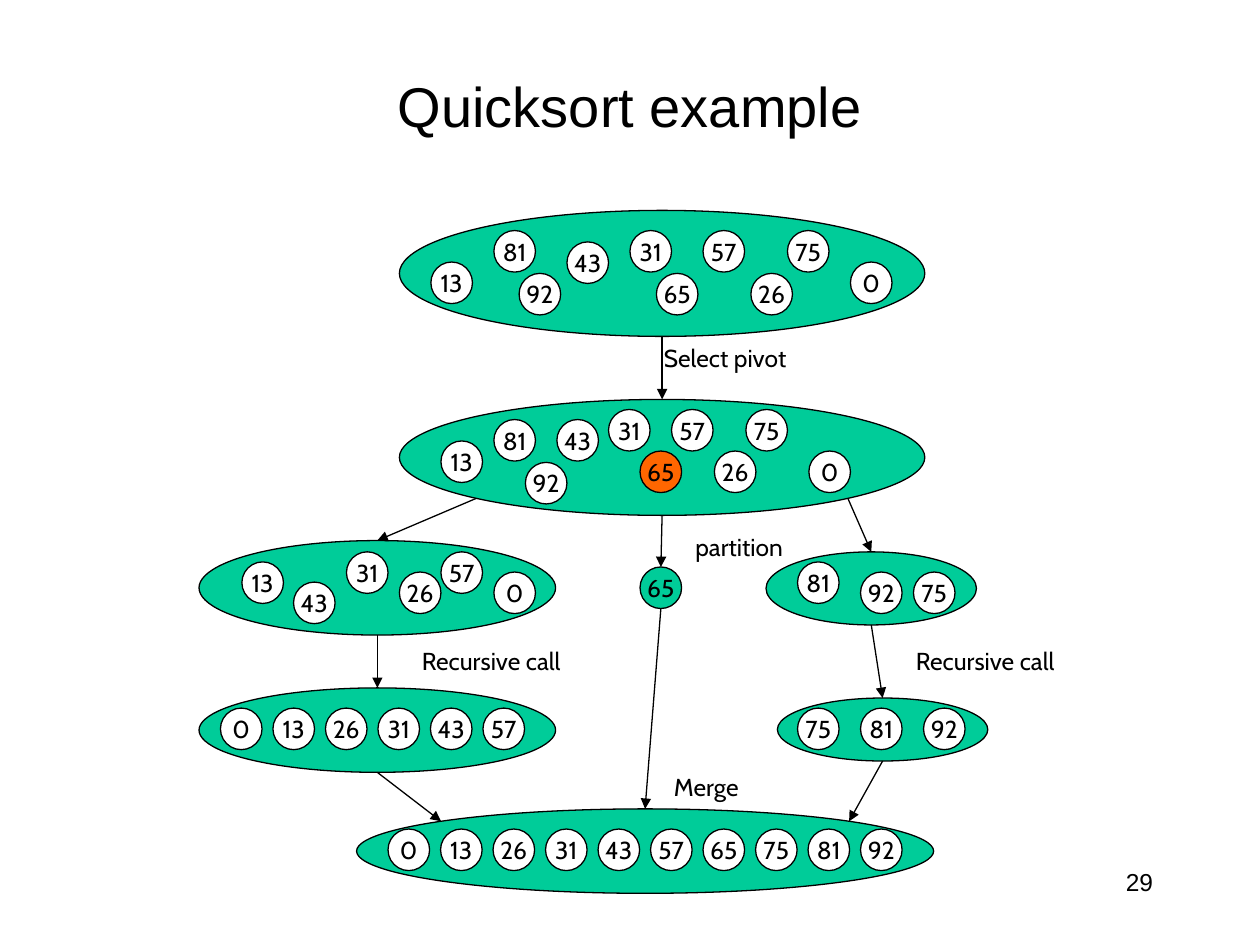
"""Build the quicksort example slide."""
import math
from typing import NamedTuple

import lxml.etree
import pptx
import pptx.dml.color
import pptx.enum.shapes
import pptx.enum.text
import pptx.oxml.ns
import pptx.util

Inches = pptx.util.Inches
Pt = pptx.util.Pt
RGBColor = pptx.dml.color.RGBColor
Align = pptx.enum.text.PP_ALIGN
Anchor = pptx.enum.text.MSO_ANCHOR

BLACK = RGBColor(0x00, 0x00, 0x00)
WHITE = RGBColor(0xFF, 0xFF, 0xFF)
GREEN = RGBColor(0x00, 0xCC, 0x99)
ORANGE = RGBColor(0xFF, 0x66, 0x00)

BALL = 0.33
STEP = 5 / 12


class Ball(NamedTuple):
    value: int
    left: float
    top: float
    fill: RGBColor = WHITE


class Oval(NamedTuple):
    left: float
    top: float
    width: float
    height: float
    balls: list[Ball]

    def rim(self, angle: int) -> tuple[float, float]:
        """Return the rim point at an angle, clockwise from the right."""
        turn = math.radians(angle)
        return (self.left + self.width / 2 * (1 + math.cos(turn)),
                self.top + self.height / 2 * (1 + math.sin(turn)))


class Arrow(NamedTuple):
    start: Oval
    leave: int
    end: Oval
    enter: int


class Label(NamedTuple):
    text: str
    left: float
    top: float
    width: float
    height: float = 0.33
    size: int = 14
    font: str = "Cabin"
    align: Align = Align.LEFT
    anchor: Anchor = Anchor.TOP
    wrap: bool = False


def row(values: list[int], left: float, top: float, step: float = STEP) -> list[Ball]:
    """Return evenly spaced balls."""
    return [Ball(value, left + i * step, top) for i, value in enumerate(values)]


INPUT = Oval(3.17, 1.67, 4.17, 1, [
    Ball(13, 3.42, 2.08), Ball(81, 3.92, 1.83), Ball(92, 4.12, 2.17),
    Ball(43, 4.5, 1.92), Ball(31, 5, 1.83), Ball(65, 5.21, 2.17),
    Ball(57, 5.58, 1.83), Ball(26, 5.96, 2.17), Ball(75, 6.25, 1.83),
    Ball(0, 6.75, 2.08)])
PICK = Oval(3.17, 3.17, 4.17, 0.92, [
    Ball(13, 3.5, 3.5), Ball(81, 3.92, 3.33), Ball(92, 4.17, 3.67),
    Ball(43, 4.42, 3.33), Ball(31, 4.83, 3.25), Ball(65, 5.08, 3.58, ORANGE),
    Ball(57, 5.33, 3.25), Ball(26, 5.67, 3.58), Ball(75, 5.92, 3.25),
    Ball(0, 6.42, 3.58)])
LOW = Oval(1.58, 4.29, 2.83, 0.75, [
    Ball(13, 1.92, 4.46), Ball(43, 2.33, 4.62), Ball(31, 2.75, 4.38),
    Ball(57, 3.5, 4.38), Ball(26, 3.17, 4.54), Ball(0, 3.92, 4.54)])
HIGH = Oval(6.08, 4.38, 1.67, 0.58, [
    Ball(81, 6.33, 4.46), Ball(92, 6.83, 4.54), Ball(75, 7.25, 4.54)])
LEFT = Oval(1.58, 5.46, 2.83, 0.67, row([0, 13, 26, 31, 43, 57], 1.75, 5.62))
RIGHT = Oval(6.17, 5.54, 1.67, 0.5, row([75, 81, 92], 6.33, 5.62, 0.5))
MERGED = Oval(2.83, 6.42, 4.58, 0.67,
              row([0, 13, 26, 31, 43, 57, 65, 75, 81, 92], 3.08, 6.58))
PIVOT = Ball(65, 5.08, 4.5, GREEN)
MID = Oval(PIVOT.left, PIVOT.top, BALL, BALL, [])

OVALS = [INPUT, PICK, LOW, HIGH, LEFT, RIGHT, MERGED]
ARROWS = [
    Arrow(INPUT, 90, PICK, 270), Arrow(PICK, 135, LOW, 270),
    Arrow(PICK, 90, MID, 270), Arrow(PICK, 45, HIGH, 270),
    Arrow(LOW, 90, LEFT, 270), Arrow(HIGH, 90, RIGHT, 270),
    Arrow(LEFT, 90, MERGED, 225), Arrow(MID, 90, MERGED, 270),
    Arrow(RIGHT, 90, MERGED, 315)]
LABELS = [
    Label("Quicksort example", 0.75, 0.42, 8.5, 0.83, 32, "Arial",
          Align.CENTER, Anchor.MIDDLE, True),
    Label("29", 7.17, 6.83, 2.08, 0.5, 14, "Arial", Align.RIGHT, wrap=True),
    Label("Select pivot", 5.17, 2.67, 1.19),
    Label("partition", 5.42, 4.17, 0.91),
    Label("Recursive call", 3.25, 5.08, 1.36),
    Label("Recursive call", 7.17, 5.08, 1.36),
    Label("Merge", 5.25, 6.08, 0.73)]


def write(shape, text: str, size: int, font: str, align: Align,
          anchor: Anchor, wrap: bool) -> None:
    """Put one styled line of text in a shape."""
    frame = shape.text_frame
    frame.word_wrap = wrap
    frame.vertical_anchor = anchor
    line = frame.paragraphs[0]
    line.text = text
    line.alignment = align
    line.font.size = Pt(size)
    line.font.name = font
    line.font.color.rgb = BLACK


def draw_disc(shapes, left: float, top: float, width: float, height: float,
              fill: RGBColor):
    """Draw a filled ellipse with a thin black rim."""
    disc = shapes.add_shape(pptx.enum.shapes.MSO_SHAPE.OVAL, Inches(left),
                            Inches(top), Inches(width), Inches(height))
    disc.shadow.inherit = False
    disc.fill.solid()
    disc.fill.fore_color.rgb = fill
    disc.line.color.rgb = BLACK
    disc.line.width = Pt(0.75)
    return disc


def draw_ball(shapes, ball: Ball) -> None:
    """Draw a numbered ball."""
    disc = draw_disc(shapes, ball.left, ball.top, BALL, BALL, ball.fill)
    write(disc, str(ball.value), 14, "Cabin", Align.CENTER, Anchor.MIDDLE, False)


def draw_oval(shapes, oval: Oval) -> None:
    """Draw an oval grouped with its balls."""
    group = shapes.add_group_shape().shapes
    draw_disc(group, oval.left, oval.top, oval.width, oval.height, GREEN)
    for ball in oval.balls:
        draw_ball(group, ball)


def draw_arrow(shapes, arrow: Arrow) -> None:
    """Draw an arrow from rim to rim."""
    start = arrow.start.rim(arrow.leave)
    end = arrow.end.rim(arrow.enter)
    line = shapes.add_connector(pptx.enum.shapes.MSO_CONNECTOR.STRAIGHT,
                                *map(Inches, start + end))
    line.line.color.rgb = BLACK
    line.line.width = Pt(0.75)
    qn = pptx.oxml.ns.qn
    props = line.line._get_or_add_ln()
    lxml.etree.SubElement(props, qn("a:tailEnd"), type="triangle")
    lxml.etree.SubElement(props.getparent(), qn("a:effectLst"))


def draw_label(shapes, label: Label) -> None:
    """Draw a text box."""
    box = shapes.add_textbox(Inches(label.left), Inches(label.top),
                             Inches(label.width), Inches(label.height))
    write(box, label.text, label.size, label.font, label.align, label.anchor,
          label.wrap)


def main() -> None:
    """Build and save the slide."""
    deck = pptx.Presentation()
    deck.slide_width, deck.slide_height = Inches(10), Inches(7.5)
    shapes = deck.slides.add_slide(deck.slide_layouts[6]).shapes
    for oval in OVALS:
        draw_oval(shapes, oval)
    draw_ball(shapes, PIVOT)
    for arrow in ARROWS:
        draw_arrow(shapes, arrow)
    for label in LABELS:
        draw_label(shapes, label)
    deck.save("out.pptx")


if __name__ == "__main__":
    main()
